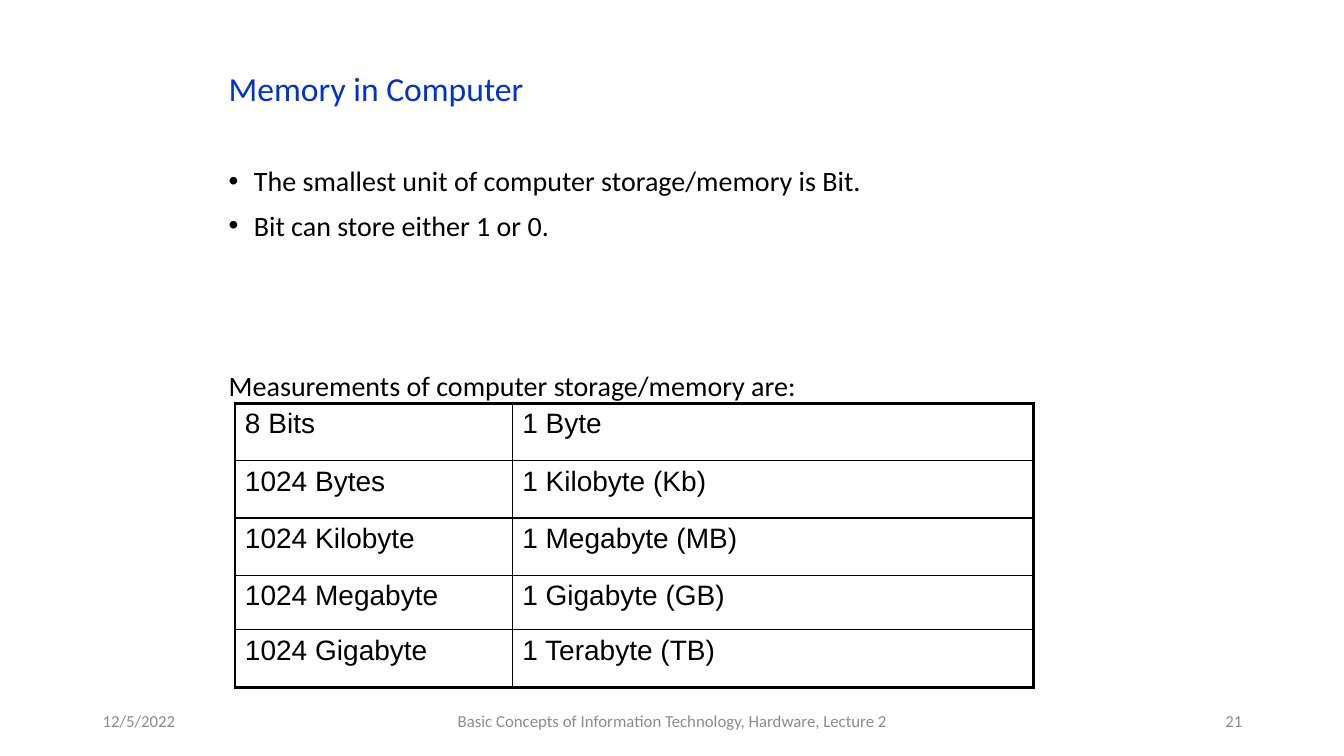
from pptx import Presentation
from pptx.dml.color import RGBColor
from pptx.enum.text import MSO_ANCHOR as Anchor, PP_ALIGN as Align
from pptx.oxml import parse_xml
from pptx.oxml.ns import nsdecls
from pptx.util import Inches, Pt

BLUE = RGBColor(0x00, 0x33, 0xCC)
BLACK = RGBColor(0x00, 0x00, 0x00)
GREY = RGBColor(0x8C, 0x8C, 0x8C)


class Deck:
    """Holds the style and the current slide."""

    def __init__(self):
        self.prs = Presentation()
        self.prs.slide_width = Inches(13.33)
        self.prs.slide_height = Inches(7.5)
        self.slide = self.prs.slides.add_slide(self.prs.slide_layouts[6])

    def style(self, para, size, color, face="Calibri"):
        font = para.font
        font.size, font.name = Pt(size), face
        font.color.rgb = color

    def frame(self, left, top, width, height):
        box = self.slide.shapes.add_textbox(
            Inches(left), Inches(top), Inches(width), Inches(height))
        box.text_frame.word_wrap = True
        return box.text_frame

    def body(self, place, lines):
        frame = self.frame(*place)
        for i, (text, size, color, gap, mark) in enumerate(lines):
            para = frame.add_paragraph() if i else frame.paragraphs[0]
            para.text = text
            para.line_spacing = 0.9
            para.space_before = Pt(gap)
            props = para._p.get_or_add_pPr()
            props.set("marL", str(Inches(0.25)))
            props.set("indent", str(-Inches(0.25)))
            if mark:
                props.append(parse_xml(
                    f'<a:buFont {nsdecls("a")} typeface="Arial"/>'))
                props.append(parse_xml(
                    f'<a:buChar {nsdecls("a")} char="•"/>'))
            self.style(para, size, color)

    def label(self, left, width, text, align):
        frame = self.frame(left, 6.95, width, 0.4)
        frame.vertical_anchor = Anchor.MIDDLE
        para = frame.paragraphs[0]
        para.text, para.alignment = text, align
        self.style(para, 12, GREY)

    def border(self, cell, side, width):
        cell._tc.get_or_add_tcPr().append(parse_xml(
            f'<a:ln{side} {nsdecls("a")} w="{Pt(width)}"><a:solidFill>'
            f'<a:srgbClr val="{BLACK}"/></a:solidFill></a:ln{side}>'))

    def table(self, left, top, cols, highs, data):
        grid = self.slide.shapes.add_table(
            len(highs), len(cols), Inches(left), Inches(top),
            Inches(sum(cols)), Inches(sum(highs))).table
        grid.first_row = grid.horz_banding = False
        for col, width in zip(grid.columns, cols):
            col.width = Inches(width)
        for row, high in zip(grid.rows, highs):
            row.height = Inches(high)
        for r, texts in enumerate(data):
            for c, text in enumerate(texts):
                cell = grid.cell(r, c)
                cell.text = text
                self.style(cell.text_frame.paragraphs[0], 20, BLACK, "Arial")
                edges = {"L": c == 0, "R": c == len(cols) - 1,
                         "T": r == 0, "B": r == len(highs) - 1}
                for side, outer in edges.items():
                    self.border(cell, side, 2.25 if outer else 1)
                cell.fill.background()


def main():
    deck = Deck()
    deck.body((2.17, 0.67, 9.5, 3.5), [
        ("Memory in Computer", 24, BLUE, 0, False),
        ("The smallest unit of computer storage/memory is Bit.",
         20, BLACK, 42, True),
        ("Bit can store either 1 or 0.", 20, BLACK, 10, True),
        ("Measurements of computer storage/memory are:",
         20, BLACK, 93, False),
    ])
    deck.table(2.33, 4, [2.75, 5.17], [0.57, 0.57, 0.57, 0.54, 0.57], [
        ("8 Bits", "1 Byte"),
        ("1024 Bytes", "1 Kilobyte (Kb)"),
        ("1024 Kilobyte", "1 Megabyte (MB)"),
        ("1024 Megabyte", "1 Gigabyte (GB)"),
        ("1024 Gigabyte", "1 Terabyte (TB)"),
    ])
    deck.label(0.92, 3, "12/5/2022", Align.LEFT)
    deck.label(
        4.42, 4.5,
        "Basic Concepts of Information Technology, Hardware, Lecture 2",
        Align.CENTER)
    deck.label(9.42, 3, "21", Align.RIGHT)
    deck.prs.save("out.pptx")


if __name__ == "__main__":
    main()
